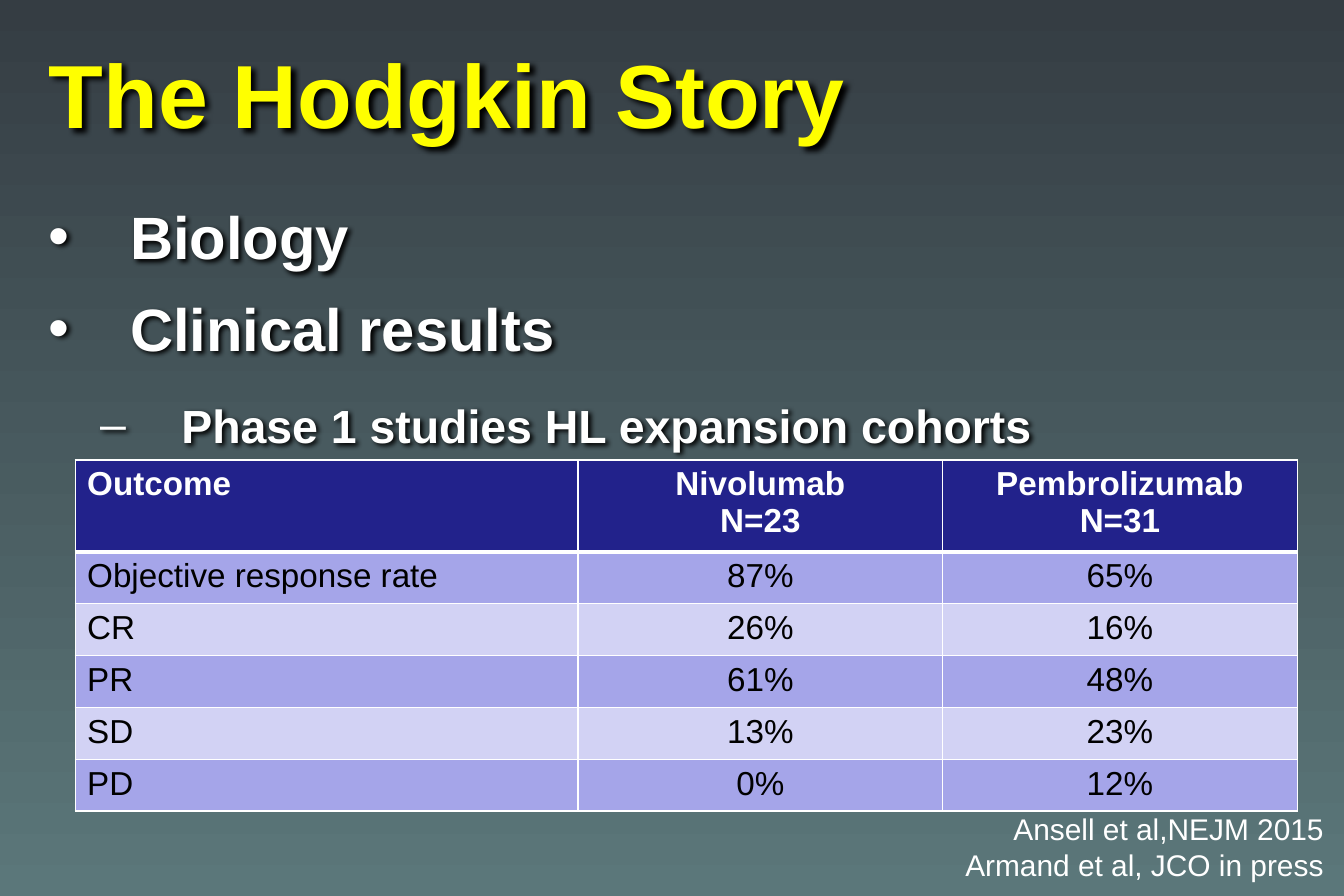
from dataclasses import dataclass

from lxml import etree
from pptx import Presentation
from pptx.dml.color import RGBColor
from pptx.enum.text import MSO_ANCHOR, PP_ALIGN
from pptx.oxml import parse_xml
from pptx.oxml.ns import nsdecls, qn
from pptx.util import Inches, Pt

LEFT, CENTER, RIGHT = PP_ALIGN.LEFT, PP_ALIGN.CENTER, PP_ALIGN.RIGHT
TOP, MIDDLE = MSO_ANCHOR.TOP, MSO_ANCHOR.MIDDLE

FONT = "Arial"
WHITE, BLACK, YELLOW = "FFFFFF", "000000", "FFFF00"
BACKGROUND = ("353D43", "5B777A")
HEADER_FILL = "22228B"
BAND_FILLS = ("A5A5E9", "D2D2F4")

COLUMN_WIDTHS = (4.21, 3.05, 2.97)
HEADER_HEIGHT, ROW_HEIGHT = 0.77, 0.43


@dataclass
class Bullet:
    text: str
    mark: str
    size: int
    level: int
    margin: float


@dataclass
class Outcome:
    name: str
    nivolumab: str
    pembrolizumab: str

    def texts(self) -> tuple[str, str, str]:
        return self.name, self.nivolumab, self.pembrolizumab


BULLETS = [
    Bullet("Biology", "•", 36, 0, 0.68),
    Bullet("Clinical results", "•", 36, 0, 0.68),
    Bullet("Phase 1 studies HL expansion cohorts", "–", 28, 1, 1.11),
]
OUTCOMES = [
    Outcome("Outcome", "Nivolumab\nN=23", "Pembrolizumab\nN=31"),
    Outcome("Objective response rate", "87%", "65%"),
    Outcome("CR", "26%", "16%"),
    Outcome("PR", "61%", "48%"),
    Outcome("SD", "13%", "23%"),
    Outcome("PD", "0%", "12%"),
]


def rgb(color: str) -> RGBColor:
    return RGBColor.from_string(color)


def write(frame, text: str, *, size: int, color: str = WHITE,
          bold: bool = False, align=LEFT) -> None:
    """Fill a text frame with one paragraph per line of text."""
    frame.text = text
    for paragraph in frame.paragraphs:
        paragraph.alignment = align
        font = paragraph.runs[0].font
        font.name, font.size, font.bold = FONT, Pt(size), bold
        font.color.rgb = rgb(color)


def add_box(slide, left: float, top: float, width: float, height: float, *,
            wrap: bool = True, anchor=TOP, shadow: bool = False):
    box = slide.shapes.add_textbox(Inches(left), Inches(top),
                                   Inches(width), Inches(height))
    box.text_frame.word_wrap = wrap
    box.text_frame.vertical_anchor = anchor
    if shadow:
        box._element.spPr.append(parse_xml(
            f'<a:effectLst {nsdecls("a")}><a:outerShdw blurRad="38100" '
            'dist="38100" dir="2700000" algn="tl"><a:srgbClr val="000000"/>'
            '</a:outerShdw></a:effectLst>'))
    return box.text_frame


def format_bullet(paragraph, bullet: Bullet) -> None:
    properties = paragraph._p.get_or_add_pPr()
    properties.set("marL", str(Inches(bullet.margin)))
    properties.set("indent", str(-Inches(0.68)))
    etree.SubElement(properties, qn("a:buFont"), typeface=FONT)
    etree.SubElement(properties, qn("a:buChar"), char=bullet.mark)
    paragraph.level = bullet.level
    paragraph.line_spacing = Pt(48)
    paragraph.runs[0].font.size = Pt(bullet.size)


def add_borders(cell, bottom_width: float) -> None:
    properties = cell._tc.get_or_add_tcPr()
    for side, width in (("L", 1), ("R", 1), ("T", 1), ("B", bottom_width)):
        properties.append(parse_xml(
            f'<a:ln{side} {nsdecls("a")} w="{Pt(width)}"><a:solidFill>'
            f'<a:srgbClr val="{WHITE}"/></a:solidFill></a:ln{side}>'))


def add_outcome_table(slide) -> None:
    height = HEADER_HEIGHT + ROW_HEIGHT * (len(OUTCOMES) - 1)
    table = slide.shapes.add_table(
        len(OUTCOMES), len(COLUMN_WIDTHS), Inches(0.63), Inches(3.85),
        Inches(sum(COLUMN_WIDTHS)), Inches(height)).table
    for column, width in zip(table.columns, COLUMN_WIDTHS):
        column.width = Inches(width)
    for r, outcome in enumerate(OUTCOMES):
        header = r == 0
        table.rows[r].height = Inches(HEADER_HEIGHT if header else ROW_HEIGHT)
        for c, text in enumerate(outcome.texts()):
            cell = table.cell(r, c)
            write(cell.text_frame, text, size=20, bold=header,
                  color=WHITE if header else BLACK,
                  align=CENTER if c else LEFT)
            # The rule under the header is shared with the first body row.
            add_borders(cell, 3 if header else 1)
            if r == 1:
                cell._tc.tcPr.find(qn("a:lnT")).set("w", str(Pt(3)))
            cell.fill.solid()
            cell.fill.fore_color.rgb = rgb(
                HEADER_FILL if header else BAND_FILLS[(r - 1) % 2])


def paint_background(slide) -> None:
    fill = slide.background.fill
    fill.gradient()
    fill.gradient_angle = 270
    for stop, color in zip(fill.gradient_stops, BACKGROUND):
        stop.color.rgb = rgb(color)


def main() -> None:
    deck = Presentation()
    deck.slide_width, deck.slide_height = Inches(11.25), Inches(7.5)
    slide = deck.slides.add_slide(deck.slide_layouts[6])
    paint_background(slide)

    title = add_box(slide, 0.31, -0.03, 10.55, 1.61, anchor=MIDDLE, shadow=True)
    write(title, "The Hodgkin Story", size=54, color=YELLOW, bold=True)

    body = add_box(slide, 0.31, 1.56, 10.55, 5.42, shadow=True)
    write(body, "\n".join(b.text for b in BULLETS), size=36, bold=True)
    for paragraph, bullet in zip(body.paragraphs, BULLETS):
        format_bullet(paragraph, bullet)
    for paragraph, bullet in zip(body.paragraphs[1:], BULLETS[1:]):
        paragraph.space_before = Pt(bullet.size * 0.2)

    citations = add_box(slide, 7.95, 6.74, 3.23, 0.71, wrap=False)
    write(citations, "Ansell et al,NEJM 2015\nArmand et al, JCO in press",
          size=18, align=RIGHT)

    add_outcome_table(slide)
    deck.save("out.pptx")


if __name__ == "__main__":
    main()
